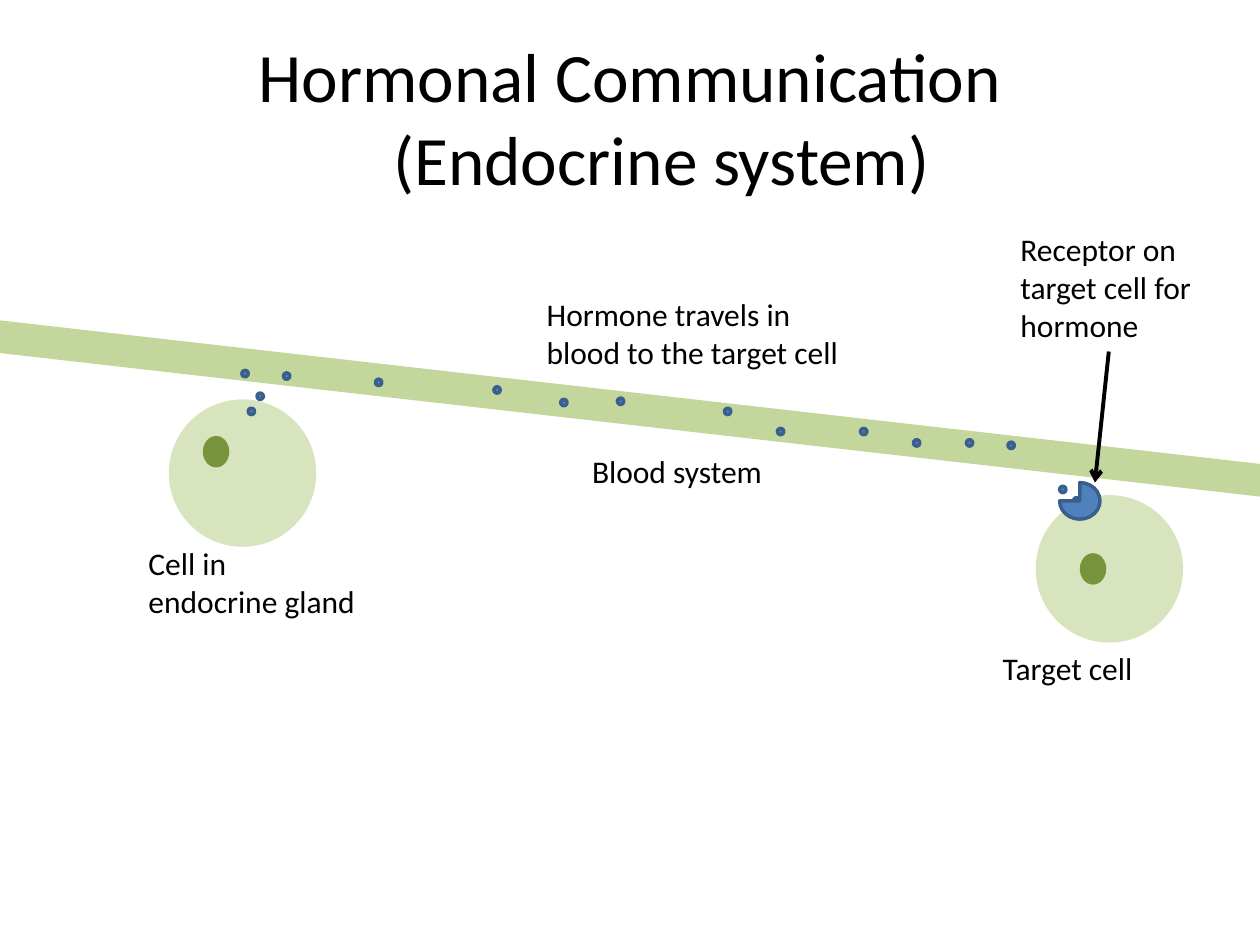
import dataclasses
import lxml.etree
import pptx
import pptx.dml.color
import pptx.enum.shapes
import pptx.enum.text
import pptx.oxml.ns
import pptx.util

Inches = pptx.util.Inches
Kind = pptx.enum.shapes.MSO_SHAPE
Text = pptx.enum.text


@dataclasses.dataclass
class Theme:
    font: str = "Calibri"
    title: float = 39.6
    body: float = 18
    ink: str = "000000"
    cell: str = "D7E4BD"
    core: str = "77933C"
    blood: str = "C3D69B"
    dot: str = "4F81BD"
    edge: str = "3A5F8C"


def color(code):
    return pptx.dml.color.RGBColor.from_string(code)


def write(frame, text, size, font, ink, align=None, anchor=None):
    frame.word_wrap = True
    frame.vertical_anchor = anchor
    para = frame.paragraphs[0]
    para.text = text
    para.alignment = align
    for run in para.runs:
        run.font.size = pptx.util.Pt(size)
        run.font.name = font
        run.font.color.rgb = color(ink)


class Board:
    def __init__(self, slide, theme):
        self.slide = slide
        self.theme = theme

    def title(self, text, left, top, width, height):
        box = self.slide.shapes.title
        box.left, box.top = Inches(left), Inches(top)
        box.width, box.height = Inches(width), Inches(height)
        look = self.theme
        write(box.text_frame, text, look.title, look.font, look.ink,
              align=Text.PP_ALIGN.CENTER, anchor=Text.MSO_ANCHOR.MIDDLE)
        box.text_frame.auto_size = Text.MSO_AUTO_SIZE.NONE

    def label(self, text, left, top, width, height):
        box = self.slide.shapes.add_textbox(
            Inches(left), Inches(top), Inches(width), Inches(height))
        look = self.theme
        write(box.text_frame, text, look.body, look.font, look.ink)
        box.text_frame.auto_size = Text.MSO_AUTO_SIZE.SHAPE_TO_FIT_TEXT

    def shape(self, kind, left, top, width, height, fill, line=None):
        item = self.slide.shapes.add_shape(
            kind, Inches(left), Inches(top), Inches(width), Inches(height))
        item.shadow.inherit = False
        item.fill.solid()
        item.fill.fore_color.rgb = color(fill)
        if line:
            item.line.color.rgb = color(line)
            item.line.width = pptx.util.Pt(2)
        else:
            item.line.fill.background()
        return item

    def cell(self, left, top, across, down):
        self.shape(Kind.OVAL, left, top, 1.17, 1.17, self.theme.cell)
        self.shape(Kind.OVAL, left + across, top + down, 0.21, 0.25,
                   self.theme.core)

    def vessel(self, left, top, width, height, angle):
        look = self.theme
        tube = self.shape(Kind.ROUNDED_RECTANGLE, left, top, width, height,
                          look.blood, look.blood)
        tube.rotation = angle

    def hormone(self, left, top):
        look = self.theme
        self.shape(Kind.OVAL, left, top, 0.05, 0.05, look.dot, look.edge)

    def receptor(self, left, top, width, height):
        look = self.theme
        pie = self.shape(Kind.PIE, left, top, width, height,
                         look.dot, look.edge)
        pie.adjustments[0] = 162
        pie.adjustments[1] = 108

    def arrow(self, start, end):
        line = self.slide.shapes.add_connector(
            pptx.enum.shapes.MSO_CONNECTOR.STRAIGHT,
            *map(Inches, start + end))
        line.line.color.rgb = color(self.theme.ink)
        line.line.width = pptx.util.Pt(2.25)
        name = pptx.oxml.ns.qn
        stroke = line.line._get_or_add_ln()
        lxml.etree.SubElement(stroke, name("a:tailEnd"), type="arrow")
        lxml.etree.SubElement(line._element.spPr, name("a:effectLst"))


def main():
    deck = pptx.Presentation()
    deck.slide_width, deck.slide_height = Inches(10), Inches(7.5)
    board = Board(deck.slides.add_slide(deck.slide_layouts[5]), Theme())

    board.title("Hormonal Communication\v\t(Endocrine system)",
                0.5, 0.3, 9, 1.25)
    board.cell(1.34, 3.17, 0.27, 0.29)
    board.cell(8.22, 3.93, 0.35, 0.46)
    board.label("Cell in endocrine gland", 1.08, 4.27, 1.89, 0.71)
    board.vessel(-0.35, 3.12, 10.57, 0.23, 6.5)
    board.label("Blood system", 4.6, 3.54, 1.89, 0.4)
    board.label("Hormone travels in blood to the target cell",
                4.24, 2.29, 2.58, 0.71)

    spots = [
        (1.92, 2.94), (2.04, 3.12), (1.97, 3.24), (2.25, 2.96),
        (2.98, 3.01), (3.92, 3.07), (4.45, 3.17), (6.83, 3.4),
        (8, 3.51), (4.9, 3.16), (6.17, 3.4), (5.75, 3.24),
        (7.67, 3.49), (7.25, 3.49), (8.41, 3.86), (8.52, 3.95),
    ]
    for left, top in spots:
        board.hormone(left, top)

    board.receptor(8.41, 3.83, 0.32, 0.29)
    board.label("Target cell", 7.86, 5.1, 1.89, 0.4)
    board.label("Receptor on target cell for hormone", 8, 1.78, 1.89, 1.01)
    board.arrow((8.8, 2.79), (8.69, 3.83))

    deck.save("out.pptx")


if __name__ == "__main__":
    main()
